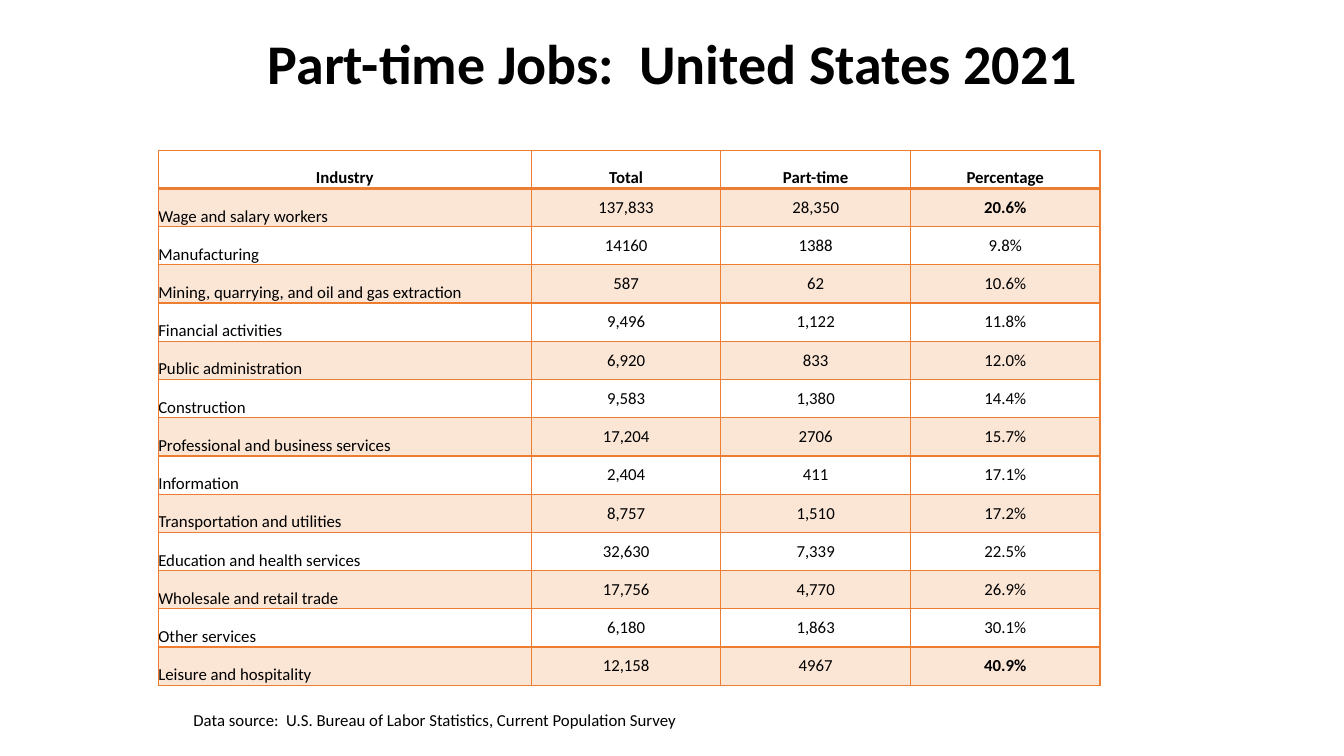
from lxml.etree import SubElement
from pptx import Presentation
from pptx.dml.color import RGBColor
from pptx.enum.text import MSO_ANCHOR as Anchor, PP_ALIGN as Align
from pptx.oxml import parse_xml
from pptx.oxml.ns import nsdecls, qn
from pptx.util import Inches, Pt

BLACK = RGBColor(0x00, 0x00, 0x00)
ORANGE = RGBColor(0xED, 0x7D, 0x31)

HEADINGS = ("Industry", "Total", "Part-time", "Percentage")
INDUSTRIES = [
    ("Wage and salary workers", "137,833", "28,350", "20.6%"),
    ("Manufacturing", "14160", "1388", "9.8%"),
    ("Mining, quarrying, and oil and gas extraction", "587", "62", "10.6%"),
    ("Financial activities", "9,496", "1,122", "11.8%"),
    ("Public administration", "6,920", "833", "12.0%"),
    ("Construction", "9,583", "1,380", "14.4%"),
    ("Professional and business services", "17,204", "2706", "15.7%"),
    ("Information", "2,404", "411", "17.1%"),
    ("Transportation and utilities", "8,757", "1,510", "17.2%"),
    ("Education and health services", "32,630", "7,339", "22.5%"),
    ("Wholesale and retail trade", "17,756", "4,770", "26.9%"),
    ("Other services", "6,180", "1,863", "30.1%"),
    ("Leisure and hospitality", "12,158", "4967", "40.9%"),
]
HIGHLIGHTS = {"20.6%", "40.9%"}


class JobsSlide:
    """Holds the text style and the slide, and adds each kind of element."""

    font_name = "Calibri"

    def __init__(self, deck):
        self.slide = deck.slides.add_slide(deck.slide_layouts[6])

    def style(self, paragraph, size, bold=False, align=Align.LEFT):
        paragraph.alignment = align
        font = paragraph.font
        font.name, font.size, font.bold = self.font_name, Pt(size), bold
        font.color.rgb = BLACK

    def add_text(self, wording, left, top, width, height, size, **style):
        box = self.slide.shapes.add_textbox(
            Inches(left), Inches(top), Inches(width), Inches(height))
        frame = box.text_frame
        frame.word_wrap = True
        frame.text = wording
        self.style(frame.paragraphs[0], size, **style)
        return frame

    def add_title(self, wording):
        title = self.add_text(wording, 1.57, 0.27, 10.2, 0.78, 40,
                              bold=True, align=Align.CENTER)
        title.vertical_anchor = Anchor.MIDDLE
        title.margin_left = title.margin_right = 0
        title.margin_top = title.margin_bottom = 0
        title.paragraphs[0].line_spacing = 0.9

    def add_borders(self, cell, top, bottom):
        properties = cell._tc.get_or_add_tcPr()
        sides = (("lnL", 1), ("lnR", 1), ("lnT", top), ("lnB", bottom))
        for place, (side, weight) in enumerate(sides):
            properties.insert(place, parse_xml(
                f'<a:{side} {nsdecls("a")} w="{Pt(weight)}"><a:solidFill>'
                f'<a:srgbClr val="{ORANGE}"/></a:solidFill></a:{side}>'))

    def add_band(self, cell):
        cell.fill.solid()
        cell.fill.fore_color.rgb = ORANGE
        tint = cell._tc.tcPr.find(".//" + qn("a:srgbClr"))
        SubElement(tint, qn("a:alpha"), val="20000")

    def fill_cell(self, cell, wording, row, column):
        heading, label = row == 0, column == 0
        cell.text = wording
        cell.margin_left = cell.margin_right = 0
        cell.margin_top = cell.margin_bottom = 0
        cell.vertical_anchor = Anchor.BOTTOM if heading or label else Anchor.MIDDLE
        self.style(cell.text_frame.paragraphs[0], 12,
                   bold=heading or wording in HIGHLIGHTS,
                   align=Align.LEFT if label and not heading else Align.CENTER)
        if row % 2:
            self.add_band(cell)
        else:
            cell.fill.background()
        self.add_borders(cell, 2 if row == 1 else 1, 2 if heading else 1)

    def add_jobs_table(self, records, widths, left, top, height):
        jobs = self.slide.shapes.add_table(
            len(records), len(widths), Inches(left), Inches(top),
            Inches(sum(widths)), Inches(height)).table
        jobs.horz_banding = False
        for column, width in zip(jobs.columns, widths):
            column.width = Inches(width)
        for row, record in enumerate(records):
            for column, wording in enumerate(record):
                self.fill_cell(jobs.cell(row, column), wording, row, column)


def main():
    deck = Presentation()
    deck.slide_width, deck.slide_height = Inches(13.33), Inches(7.5)
    jobs = JobsSlide(deck)
    jobs.add_jobs_table([HEADINGS, *INDUSTRIES], (3.7, 1.88, 1.88, 1.88),
                        1.57, 1.49, 5.31)
    jobs.add_title("Part-time Jobs:  United States 2021")
    jobs.add_text(
        "Data source:  U.S. Bureau of Labor Statistics, Current Population Survey",
        1.82, 6.99, 7.41, 0.3, 12)
    deck.save("out.pptx")


if __name__ == "__main__":
    main()
